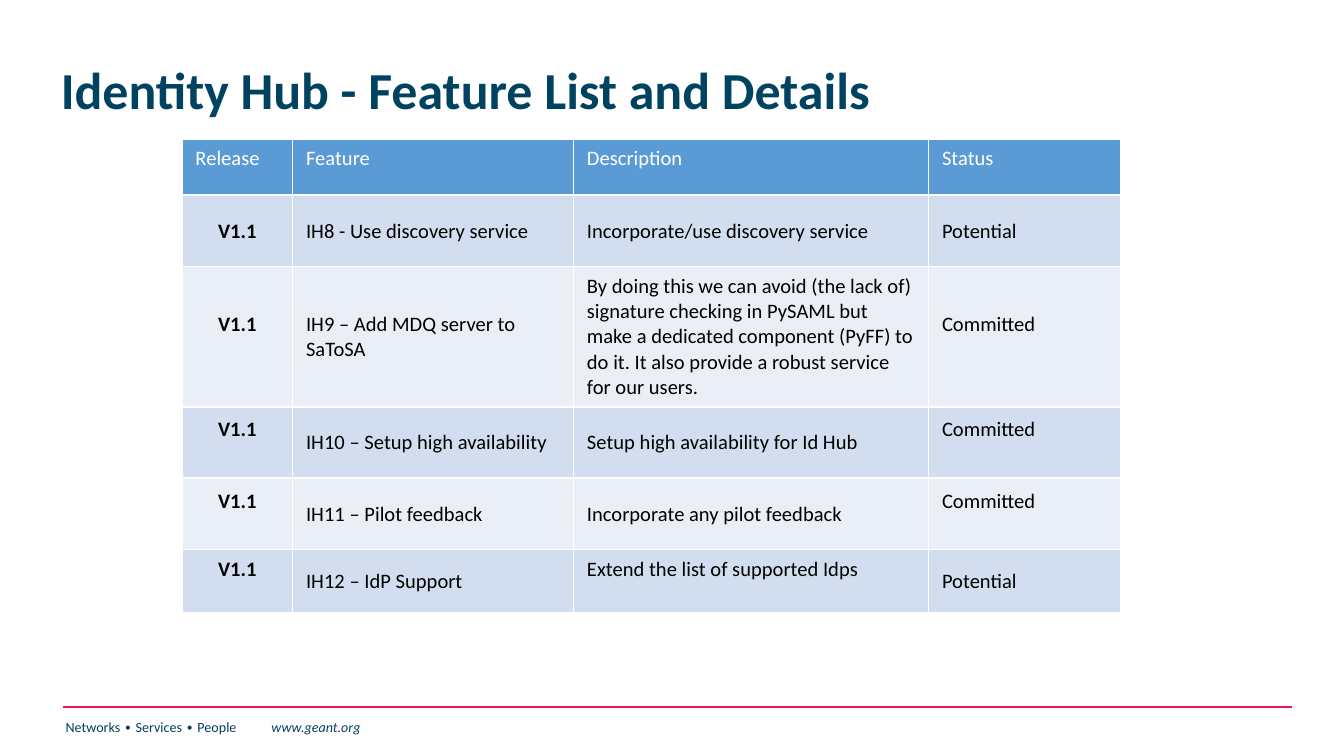
from lxml import etree
from pptx import Presentation
from pptx.dml.color import RGBColor
from pptx.enum.shapes import MSO_CONNECTOR
from pptx.enum.text import MSO_ANCHOR, PP_ALIGN
from pptx.oxml.ns import qn
from pptx.util import Cm, Pt

LINE = MSO_CONNECTOR.STRAIGHT
TOP, MID = MSO_ANCHOR.TOP, MSO_ANCHOR.MIDDLE
LEFT, MIDST = PP_ALIGN.LEFT, PP_ALIGN.CENTER

HUES = {
    "title": "004361",
    "foot": "003F5E",
    "rule": "ED1556",
    "head": "5B9BD5",
    "odd": "D2DEEF",
    "even": "EAEFF7",
    "white": "FFFFFF",
    "black": "000000",
}
FONT = "Calibri"
COLS = [2.09, 5.31, 6.71, 3.63]
ROWS = [1.06, 1.35, 2.65, 1.35, 1.35, 1.19]
HEADS = ["Release", "Feature", "Description", "Status"]
ITEMS = [
    ["V1.1", "IH8 - Use discovery service", "Incorporate/use discovery service", "Potential"],
    ["V1.1", "IH9 – Add MDQ server to SaToSA",
     "By doing this we can avoid (the lack of) signature checking in PySAML but make "
     "a dedicated component (PyFF) to do it. It also provide a robust service for our users.",
     "Committed"],
    ["V1.1", "IH10 – Setup high availability", "Setup high availability for Id Hub", "Committed"],
    ["V1.1", "IH11 – Pilot feedback", "Incorporate any pilot feedback", "Committed"],
    ["V1.1", "IH12 – IdP Support", "Extend the list of supported Idps", "Potential"],
]
RAISED = {(2, 0), (2, 3), (3, 0), (3, 3), (4, 0), (4, 3), (5, 0), (5, 2)}
RAISE = 0.48


def tint(hue):
    return RGBColor.from_string(HUES[hue])


def write(para, text, size=11, hue="black", bold=False, slant=False, align=LEFT):
    para.alignment = align
    run = para.add_run()
    run.text = text
    font = run.font
    font.name, font.size = FONT, Pt(size)
    font.bold, font.italic = bold, slant
    font.color.rgb = tint(hue)


def add_box(slide, box, anchor):
    frame = slide.shapes.add_textbox(*map(Cm, box)).text_frame
    frame.word_wrap = True
    frame.vertical_anchor = anchor
    return frame.paragraphs[0]


def add_title(slide, box):
    para = add_box(slide, box, MID)
    para.line_spacing = 0.9
    write(para, "Identity Hub - Feature List and Details", size=27.8, hue="title", bold=True)


def edge(cell):
    props = cell._tc.get_or_add_tcPr()
    for side in ("lnL", "lnR", "lnT", "lnB"):
        line = etree.SubElement(props, qn(f"a:{side}"), w=str(Pt(1)))
        fill = etree.SubElement(line, qn("a:solidFill"))
        etree.SubElement(fill, qn("a:srgbClr"), val=HUES["white"])


def add_grid(slide, left, top):
    box = map(Cm, (left, top, sum(COLS), sum(ROWS)))
    table = slide.shapes.add_table(len(ROWS), len(COLS), *box).table
    for col, width in zip(table.columns, COLS):
        col.width = Cm(width)
    for row, height in zip(table.rows, ROWS):
        row.height = Cm(height)
    for r, texts in enumerate([HEADS] + ITEMS):
        for c, text in enumerate(texts):
            cell = table.cell(r, c)
            edge(cell)
            cell.fill.solid()
            cell.fill.fore_color.rgb = tint("head" if r == 0 else "odd" if r % 2 else "even")
            cell.vertical_anchor = MID if r else TOP
            if (r, c) in RAISED:
                cell.margin_bottom += Cm(RAISE)
            first = r > 0 and c == 0
            write(cell.text_frame.paragraphs[0], text, hue="black" if r else "white",
                  bold=first, align=MIDST if first else LEFT)


def add_foot(slide, box):
    left, top, width, height = box
    rule = slide.shapes.add_connector(LINE, *map(Cm, (left, top, left + width, top)))
    rule.line.color.rgb = tint("rule")
    rule.line.width = Pt(1)
    etree.SubElement(rule._element.spPr, qn("a:effectLst"))
    para = add_box(slide, (left - 0.2, top + 0.1, 8.66, height), TOP)
    tabs = etree.SubElement(para._p.get_or_add_pPr(), qn("a:tabLst"))
    etree.SubElement(tabs, qn("a:tab"), pos=str(Cm(3.89)), algn="l")
    write(para, "Networks ∙ Services ∙ People\t", size=7.5, hue="foot")
    write(para, "www.geant.org", size=7.5, hue="title", slant=True)


def main():
    deck = Presentation()
    deck.slide_width, deck.slide_height = Cm(25.4), Cm(14.29)
    slide = deck.slides.add_slide(deck.slide_layouts[6])
    add_foot(slide, (1.19, 13.36, 23.22, 0.89))
    add_title(slide, (0.9, 0.74, 20.02, 2.03))
    add_grid(slide, 3.44, 2.63)
    deck.save("out.pptx")


if __name__ == "__main__":
    main()
